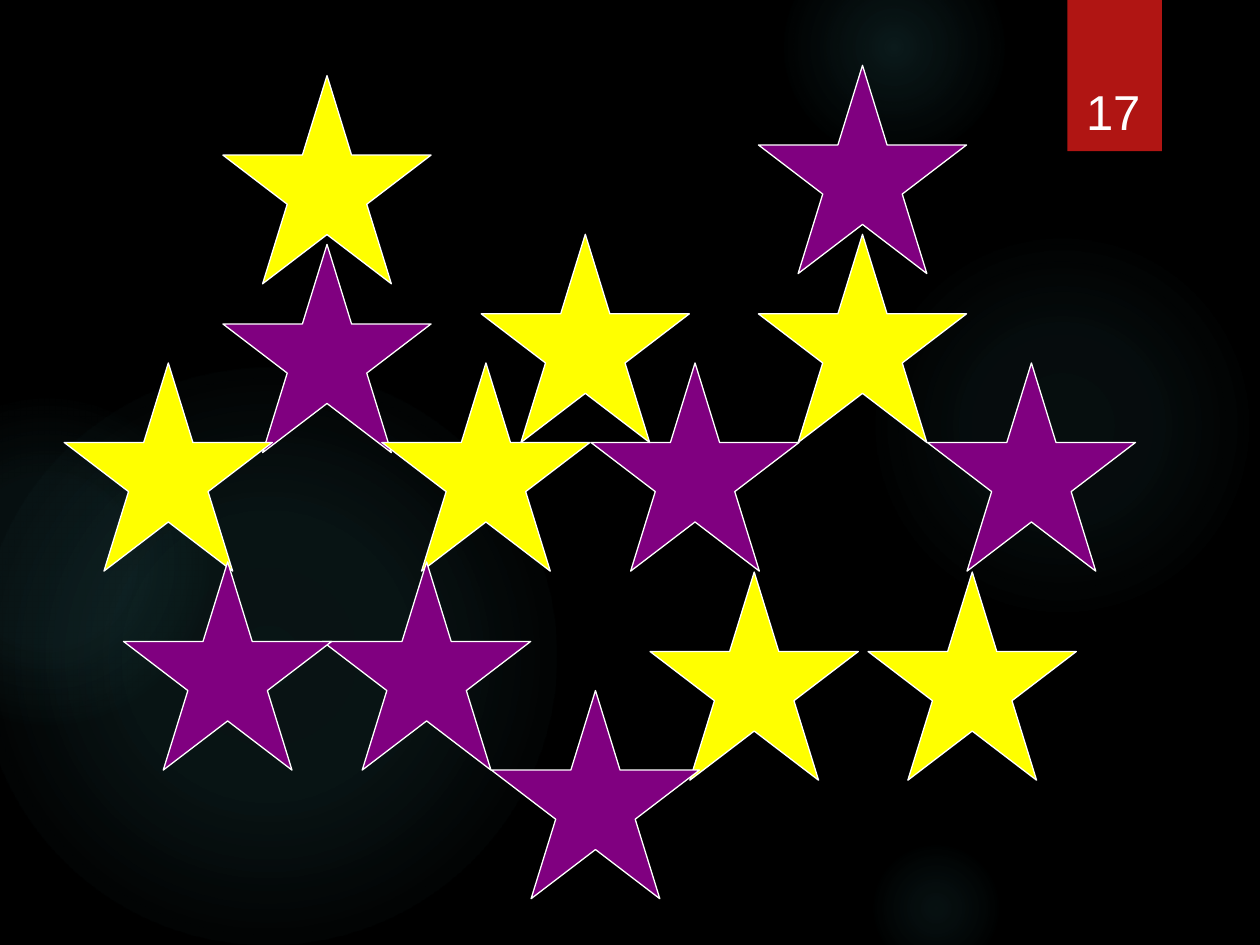
from pptx import Presentation, oxml, util as u
from pptx.dml.color import RGBColor
from pptx.enum import shapes, text
from pptx.oxml.ns import nsdecls, qn

THEME = {
    "background": "000000",
    "glow": "50B9C1",
    "tab": "B01513",
    "yellow": "FFFF00",
    "purple": "800080",
    "white": "FFFFFF",
    "font": "Arial",
    "number_size": 28,
    "outline": 0.75,
}

SLIDE_SIZE = (720, 540)
STAR_SIZE = 119
PAGE_NUMBER = "17"

GLOWS = [
    (496, 132, 222, [(0, 7), (36, 6), (69, 0)]),
    (448, -36, 126, [(0, 14), (36, 7), (73, 0)]),
    (496, 480, 78, [(0, 9), (36, 5), (66, 0)]),
    (-12, 210, 330, [(0, 11), (36, 10), (75, 0)]),
    (-66, 228, 186, [(0, 8), (36, 8), (72, 0)]),
]

STARS = [
    ("purple", 127.4, 139.7),
    ("yellow", 127.4, 43.2),
    ("yellow", 433.4, 133.9),
    ("purple", 529.9, 207.4),
    ("yellow", 218.2, 207.4),
    ("purple", 337.7, 207.4),
    ("yellow", 36.7, 207.4),
    ("purple", 184.3, 321.1),
    ("yellow", 496.1, 326.9),
    ("yellow", 371.5, 326.9),
    ("purple", 433.4, 37.4),
    ("purple", 70.6, 321.1),
    ("purple", 280.8, 394.6),
    ("yellow", 275, 133.9),
]


def color(name):
    return RGBColor.from_string(THEME[name])


def add_shape(slide, kind, left, top, width, height, fill=None, line=None):
    shape = slide.shapes.add_shape(kind, *map(u.Pt, (left, top, width, height)))
    shape.shadow.inherit = False
    if fill:
        shape.fill.solid()
        shape.fill.fore_color.rgb = color(fill)
    else:
        shape.fill.background()
    if line:
        shape.line.color.rgb = color(line)
        shape.line.width = u.Pt(THEME["outline"])
    else:
        shape.line.fill.background()
    return shape


def add_glow(slide, left, top, size, stops):
    shape = add_shape(slide, shapes.MSO_SHAPE.OVAL, left, top, size, size)
    stop_xml = "".join(
        f'<a:gs pos="{position * 1000}"><a:srgbClr val="{THEME["glow"]}">'
        f'<a:alpha val="{opacity * 1000}"/></a:srgbClr></a:gs>'
        for position, opacity in stops
    )
    gradient = oxml.parse_xml(
        f'<a:gradFill {nsdecls("a")} rotWithShape="1"><a:gsLst>{stop_xml}</a:gsLst>'
        '<a:path path="circle"><a:fillToRect l="50000" t="50000" r="50000" b="50000"/>'
        "</a:path></a:gradFill>"
    )
    properties = shape._element.spPr
    properties.replace(properties.find(qn("a:noFill")), gradient)


def add_shadow(shape, opacity, blur, distance, angle):
    shadow = oxml.parse_xml(
        f'<a:outerShdw {nsdecls("a")} blurRad="{u.Pt(blur)}" dist="{u.Pt(distance)}" '
        f'dir="{angle * 60000}"><a:srgbClr val="000000">'
        f'<a:alpha val="{opacity * 1000}"/></a:srgbClr></a:outerShdw>'
    )
    shape._element.spPr.find(qn("a:effectLst")).append(shadow)


def add_text(slide, words, left, top, width, height, *, size, fill, align, anchor):
    box = slide.shapes.add_textbox(*map(u.Pt, (left, top, width, height)))
    frame = box.text_frame
    frame.word_wrap = True
    frame.vertical_anchor = anchor
    paragraph = frame.paragraphs[0]
    paragraph.alignment = align
    run = paragraph.add_run()
    run.text = words
    run.font.name = THEME["font"]
    run.font.size = u.Pt(size)
    run.font.color.rgb = color(fill)


def main():
    presentation = Presentation()
    presentation.slide_width, presentation.slide_height = map(u.Pt, SLIDE_SIZE)
    slide = presentation.slides.add_slide(presentation.slide_layouts[6])
    slide.background.fill.solid()
    slide.background.fill.fore_color.rgb = color("background")

    for glow in GLOWS:
        add_glow(slide, *glow)

    tab = add_shape(slide, shapes.MSO_SHAPE.RECTANGLE, 610, 0, 54, 86.4, fill="tab")
    add_shadow(tab, opacity=45, blur=3, distance=2, angle=90)
    add_text(
        slide, PAGE_NUMBER, 611.3, 23, 49.7, 60.5,
        size=THEME["number_size"], fill="white",
        align=text.PP_ALIGN.CENTER, anchor=text.MSO_ANCHOR.BOTTOM,
    )

    for fill, left, top in STARS:
        add_shape(
            slide, shapes.MSO_SHAPE.STAR_5_POINT, left, top, STAR_SIZE, STAR_SIZE,
            fill=fill, line="white",
        )

    presentation.save("out.pptx")


if __name__ == "__main__":
    main()
